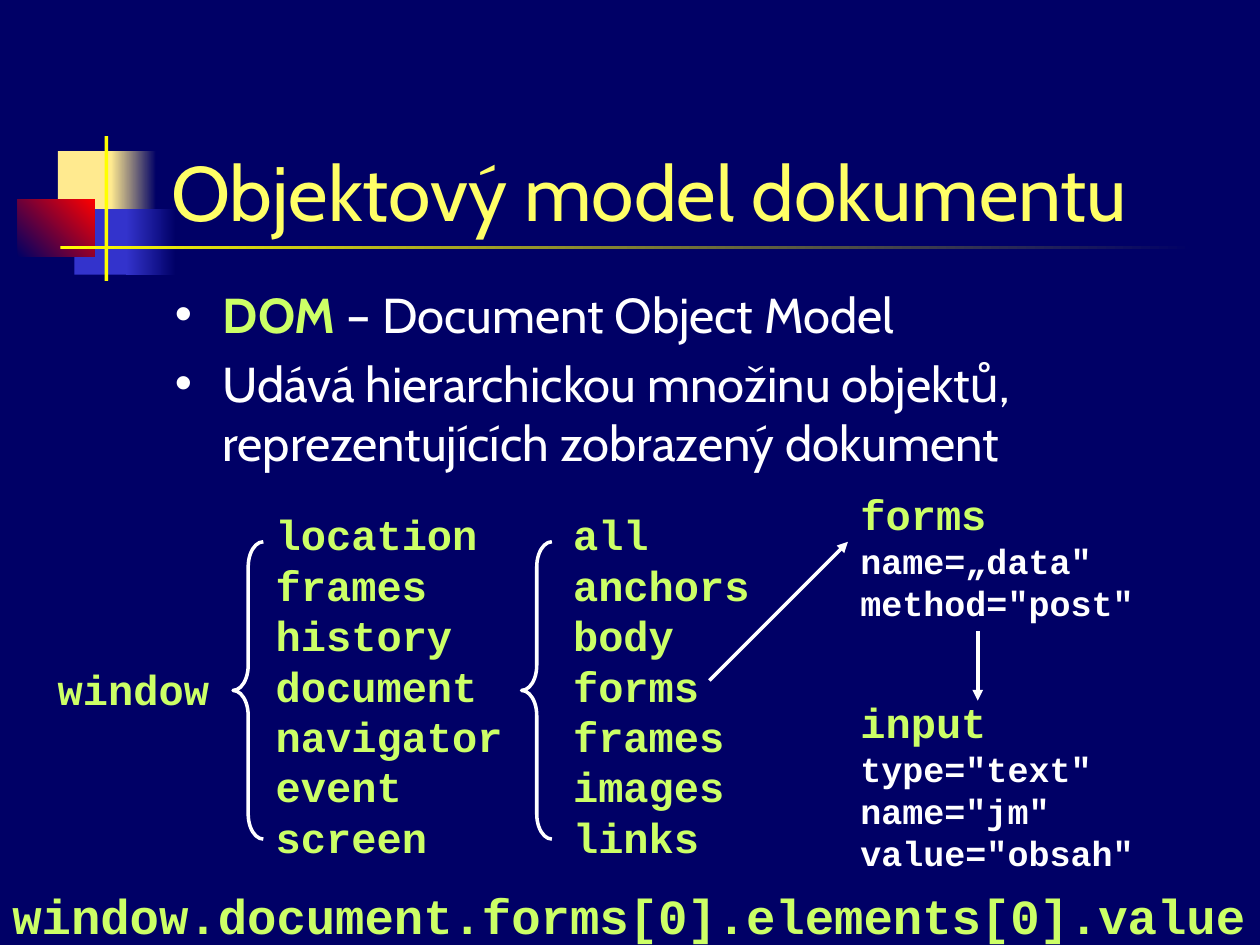
from lxml import etree
from pptx import Presentation, util as u
from pptx.dml import color
from pptx.enum import shapes, text
from pptx.oxml import ns

NAVY, WHITE, LIME, YELLOW = "000066", "FFFFFF", "CCFF66", "FFFF66"
CREAM, BLUE, RED, BRIGHT = "FFEA8F", "3333CC", "FF0000", "FFFF00"
SANS, MONO = "Cabin", "Courier New"


def rgb(value):
    return color.RGBColor.from_string(value)


def add_node(parent, tag, **attributes):
    return etree.SubElement(parent, ns.qn(tag), **attributes)


class SlideBuilder:
    def __init__(self, slide):
        self.slide = slide
        background = slide.background.fill
        background.solid()
        background.fore_color.rgb = rgb(NAVY)

    def block(self, place, *colours, angle=0):
        shape = self.slide.shapes.add_shape(
            shapes.MSO_SHAPE.RECTANGLE, *map(u.Inches, place))
        shape.shadow.inherit = False
        shape.line.fill.background()
        if len(colours) == 1:
            shape.fill.solid()
            shape.fill.fore_color.rgb = rgb(colours[0])
        else:
            shape.fill.gradient()
            shape.fill.gradient_angle = angle
            for stop, colour in zip(shape.fill.gradient_stops, colours):
                stop.color.rgb = rgb(colour)

    def text_box(self, place, paragraphs, font, hanging=0, bullet=False, bottom=False):
        box = self.slide.shapes.add_textbox(*map(u.Inches, place))
        frame = box.text_frame
        frame.word_wrap = True
        if bottom:
            frame.vertical_anchor = text.MSO_ANCHOR.BOTTOM
        frame.text = "\n".join("" for _ in paragraphs)
        for para, spans in zip(frame.paragraphs, paragraphs):
            if bullet:
                para.space_before = u.Pt(5.6)
            self.indent(para, hanging, bullet)
            for words, size, colour, bold in spans:
                span = para.add_run()
                span.text = words
                span.font.name = font
                span.font.size = u.Pt(size)
                span.font.bold = bold
                span.font.color.rgb = rgb(colour)

    def indent(self, para, hanging, bullet):
        properties = para._p.get_or_add_pPr()
        properties.set("marL", str(u.Inches(hanging)))
        properties.set("indent", str(-u.Inches(hanging)))
        if bullet:
            add_node(add_node(properties, "a:buClr"), "a:srgbClr", val=WHITE)
            add_node(properties, "a:buFont", typeface="Arial")
            add_node(properties, "a:buChar", char="•")

    def code(self, place, headings, details=()):
        paragraphs = [[(words, 24, LIME, True)] for words in headings]
        paragraphs += [[(words, 20, WHITE, True)] for words in details]
        self.text_box(place, paragraphs, MONO, hanging=0.5)

    def brace(self, left):
        shape = self.slide.shapes.add_shape(
            shapes.MSO_SHAPE.LEFT_BRACE, *map(u.Inches, (left, 4.3, 0.24, 2.36)))
        shape.shadow.inherit = False
        shape.fill.background()
        shape.adjustments[0] = 0.83
        self.stroke(shape.line)

    def arrow(self, *ends):
        line = self.slide.shapes.add_connector(
            shapes.MSO_CONNECTOR.STRAIGHT, *map(u.Inches, ends))
        self.stroke(line.line)
        add_node(line.line._get_or_add_ln(), "a:tailEnd", type="triangle")
        add_node(line._element.spPr, "a:effectLst")

    def stroke(self, line):
        line.color.rgb = rgb(WHITE)
        line.width = u.Pt(2)


def main():
    deck = Presentation()
    deck.slide_width, deck.slide_height = u.Inches(10), u.Inches(7.5)
    page = SlideBuilder(deck.slides.add_slide(deck.slide_layouts[6]))

    page.block((0.46, 1.2, 0.48, 0.52), CREAM)
    page.block((0.88, 1.2, 0.36, 0.52), CREAM, NAVY)
    page.block((0.59, 1.66, 0.46, 0.52), BLUE)
    page.block((1, 1.66, 0.4, 0.52), BLUE, NAVY)
    page.block((0.14, 1.58, 0.61, 0.46), NAVY, RED, angle=45)
    page.block((0.83, 1.08, 0.03, 1.15), BRIGHT)
    page.block((0.48, 1.95, 9, 0.03), BRIGHT, NAVY)

    page.text_box((1.26, 0.68, 8.52, 1.25),
                  [[("Objektový model dokumentu", 44, YELLOW, False)]], SANS, bottom=True)
    page.text_box((1.29, 2.21, 8.5, 1.9), [
        [("DOM", 28, LIME, True), (" – Document Object Model", 28, WHITE, False)],
        [("Udává hierarchickou množinu objektů, reprezentujících zobrazený dokument",
          28, WHITE, False)],
    ], SANS, hanging=0.38, bullet=True)

    page.code((0.36, 5.22, 1.65, 0.5), ["window"])
    page.code((2.09, 3.99, 2.2, 2.9), ["location", "frames", "history", "document",
                                       "navigator", "event", "screen"])
    page.code((4.45, 3.99, 2.2, 2.9), ["all", "anchors", "body", "forms",
                                       "frames", "images", "links"])
    page.code((6.73, 3.83, 2.99, 1.17), ["forms"], ['name=„data"', 'method="post"'])
    page.code((6.73, 5.48, 2.99, 1.5), ["input"],
              ['type="text"', 'name="jm"', 'value="obsah"'])
    for left in (1.85, 4.14):
        page.brace(left)
    page.arrow(5.63, 5.4, 6.73, 4.3)
    page.arrow(7.76, 5.01, 7.76, 5.56)
    page.text_box((0, 6.98, 10, 0.57),
                  [[("window.document.forms[0].elements[0].value", 28, LIME, True)]], MONO)
    deck.save("out.pptx")


if __name__ == "__main__":
    main()
